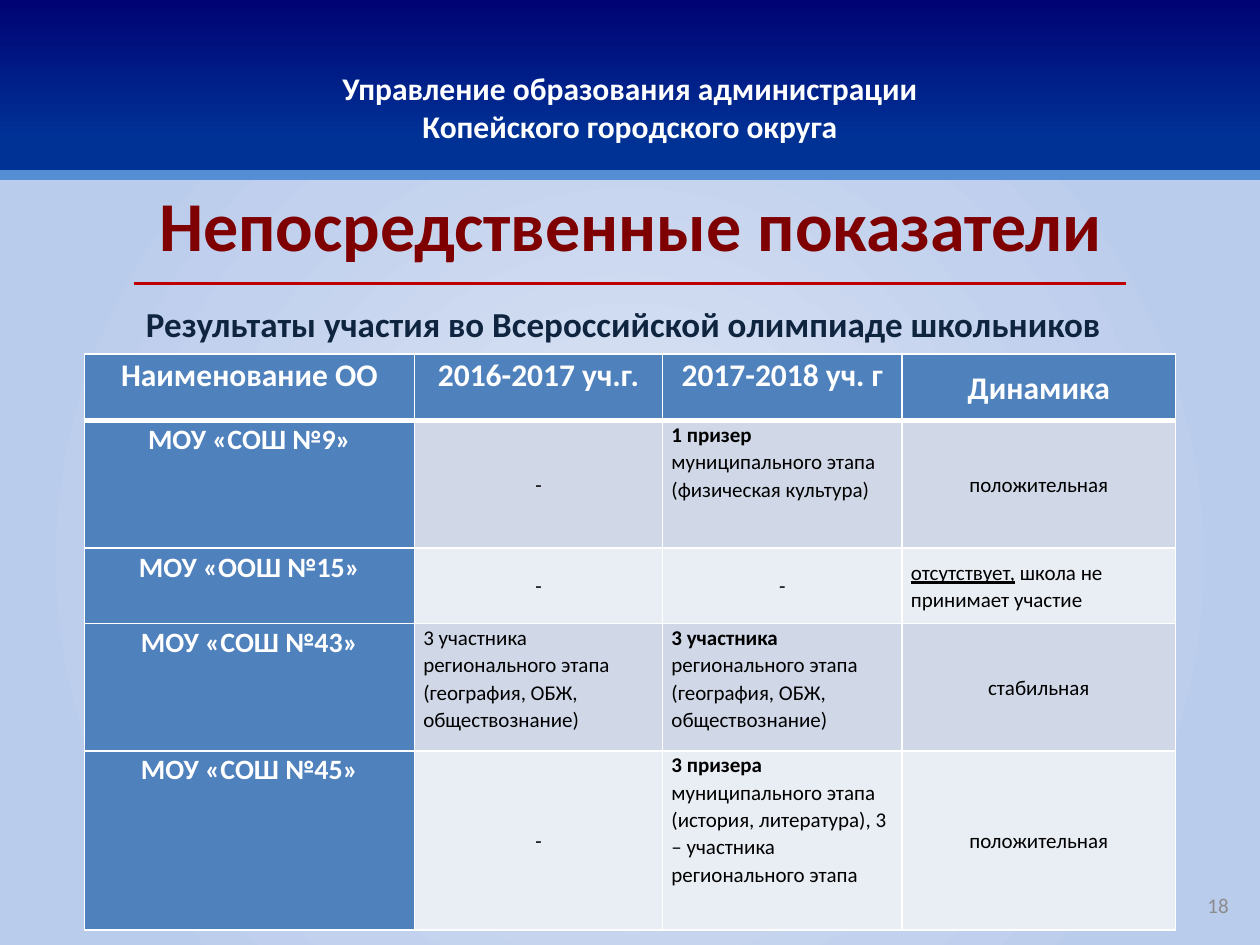
from lxml import etree
from pptx import Presentation
from pptx.dml.color import RGBColor
from pptx.enum import shapes, text
from pptx.oxml import ns, parse_xml
from pptx.util import Inches, Pt

WHITE = RGBColor(0xFF, 0xFF, 0xFF)
BLACK = RGBColor(0, 0, 0)
GREY = RGBColor(0x8C, 0x8C, 0x8C)
MAROON = RGBColor(0x7E, 0, 0)
RED = RGBColor(0xC0, 0, 0)
NAVY = RGBColor(0x0F, 0x24, 0x3E)
SKY = RGBColor(0x55, 0x8E, 0xD5)
HEADER_BLUE = RGBColor(0x4F, 0x81, 0xBD)
BANDS = [RGBColor(0xD0, 0xD8, 0xE8), RGBColor(0xE9, 0xED, 0xF4)]
BAND_STOPS = [(0, RGBColor(0, 0x03, 0x74)), (79, RGBColor(0, 0x32, 0x96))]
PANEL_STOPS = [(0, RGBColor(0xE1, 0xE8, 0xF5)), (62, RGBColor(0xC2, 0xD1, 0xED)),
               (83, RGBColor(0xBA, 0xCC, 0xEC))]
DOWNWARD = '<a:lin ang="5400000" scaled="0"/>'
RADIAL = ('<a:path path="circle"><a:fillToRect l="50000" t="50000" '
          'r="50000" b="50000"/></a:path>')

LEFT, CENTER, RIGHT = text.PP_ALIGN.LEFT, text.PP_ALIGN.CENTER, text.PP_ALIGN.RIGHT
TOP, MIDDLE = text.MSO_ANCHOR.TOP, text.MSO_ANCHOR.MIDDLE

COLUMNS = [2.62, 1.97, 1.9, 2.17]
ROWS = [0.53, 1.01, 0.6, 1.01, 1.42]
HEADINGS = ["Наименование ОО", "2016-2017 уч.г.", "2017-2018 уч. г", "Динамика"]
SUBJECTS = "регионального этапа (география, ОБЖ, обществознание)"
RESULTS = [
    ["МОУ «СОШ №9»", "-",
     ("1 призер ", "муниципального этапа (физическая культура)"), "положительная"],
    ["МОУ «ООШ №15»", "-", "-", ("отсутствует,", " школа не принимает участие")],
    ["МОУ «СОШ №43»", "3 участника " + SUBJECTS, ("3 участника ", SUBJECTS), "стабильная"],
    ["МОУ «СОШ №45»", "-",
     ("3 призера ", "муниципального этапа (история, литература), "
      "3 – участника регионального этапа"), "положительная"],
]


def format_font(font, size, color, bold=False):
    font.name = "Calibri"
    font.size = Pt(size)
    font.bold = bold
    font.color.rgb = color


def write_text(box, content, size, color, align, bold=False, anchor=TOP):
    frame = box.text_frame
    frame.word_wrap = True
    frame.vertical_anchor = anchor
    frame.text = content
    para = frame.paragraphs[0]
    para.alignment = align
    for span in para.runs:
        format_font(span.font, size, color, bold)


def add_text(page, content, place, *style, **options):
    box = page.shapes.add_textbox(*map(Inches, place))
    write_text(box, content, *style, **options)


def add_gradient_box(page, place, stops, direction):
    box = page.shapes.add_shape(shapes.MSO_SHAPE.RECTANGLE, *map(Inches, place))
    box.shadow.inherit = False
    box.line.fill.background()
    colors = "".join(f'<a:gs pos="{pos * 1000}"><a:srgbClr val="{color}"/></a:gs>'
                     for pos, color in stops)
    gradient = parse_xml(f'<a:gradFill {ns.nsdecls("a")} rotWithShape="1">'
                         f'<a:gsLst>{colors}</a:gsLst>{direction}</a:gradFill>')
    box.element.spPr.find(ns.qn("a:prstGeom")).addnext(gradient)
    return box


def add_rule(page, left, right, top, color, width):
    rule = page.shapes.add_connector(shapes.MSO_CONNECTOR.STRAIGHT, Inches(left),
                                     Inches(top), Inches(right), Inches(top))
    rule.line.color.rgb = color
    rule.line.width = Pt(width)
    etree.SubElement(rule.element.spPr, ns.qn("a:effectLst"))


def add_title(page):
    title = page.shapes.title
    title.element.getparent().append(title.element)
    title.left, title.top, title.width, title.height = map(Inches, (1.06, 1.34, 7.89, 0.87))
    write_text(title, "Непосредственные показатели", 40, MAROON, CENTER, True, MIDDLE)


def set_borders(cell, bottom_width, top_width):
    properties = cell._tc.get_or_add_tcPr()
    for side, width in (("L", 1), ("R", 1), ("T", top_width), ("B", bottom_width)):
        properties.append(parse_xml(
            f'<a:ln{side} {ns.nsdecls("a")} w="{Pt(width)}"><a:solidFill>'
            f'<a:srgbClr val="{WHITE}"/></a:solidFill></a:ln{side}>'))


def fill_cell(cell, content, size, color, bold, fill, align, anchor):
    cell.fill.solid()
    cell.fill.fore_color.rgb = fill
    cell.margin_left = cell.margin_right = Inches(0.07)
    cell.margin_top = cell.margin_bottom = 0
    cell.vertical_anchor = anchor
    para = cell.text_frame.paragraphs[0]
    para.alignment = align
    para.line_spacing = 1.07
    for part in [content] if isinstance(content, str) else content:
        span = para.add_run()
        span.text = part
        format_font(span.font, size, color, bold)


def add_results_table(page):
    frame = page.shapes.add_table(len(ROWS), len(COLUMNS), Inches(0.67), Inches(2.81),
                                  Inches(sum(COLUMNS)), Inches(sum(ROWS)))
    table = frame.table
    for column, width in zip(table.columns, COLUMNS):
        column.width = Inches(width)
    for row, height in zip(table.rows, ROWS):
        row.height = Inches(height)
    for r, values in enumerate([HEADINGS] + RESULTS):
        for c, content in enumerate(values):
            cell = table.cell(r, c)
            set_borders(cell, 3 if r == 0 else 1, 3 if r == 1 else 1)
            if r == 0:
                fill_cell(cell, content, 18, WHITE, True, HEADER_BLUE, CENTER,
                          MIDDLE if c == 3 else TOP)
            elif c == 0:
                fill_cell(cell, content, 16, WHITE, True, HEADER_BLUE, CENTER, TOP)
            else:
                short = isinstance(content, str) and len(content) < 20
                fill_cell(cell, content, 12, BLACK, False, BANDS[(r - 1) % 2],
                          CENTER if short else LEFT, MIDDLE if short or c == 3 else TOP)
                if not isinstance(content, str):
                    lead = cell.text_frame.paragraphs[0].runs[0].font
                    if c == 3:
                        lead.underline = True
                    else:
                        lead.bold = True


def main():
    deck = Presentation()
    deck.slide_width, deck.slide_height = Inches(10), Inches(7.5)
    page = deck.slides.add_slide(deck.slide_layouts[5])
    band = add_gradient_box(page, (0, 0, 10, 1.39), BAND_STOPS, DOWNWARD)
    write_text(band, "Управление образования администрации\vКопейского городского округа",
               18, WHITE, CENTER, True, MIDDLE)
    band.text_frame.margin_top = Inches(0.35)
    add_gradient_box(page, (0, 1.39, 10, 6.11), PANEL_STOPS, RADIAL)
    add_rule(page, 0, 10, 1.39, SKY, 6)
    add_rule(page, 1.06, 8.94, 2.25, RED, 2.25)
    add_title(page)
    add_text(page, "Результаты участия во Всероссийской олимпиаде школьников",
             (1.06, 2.35, 7.87, 0.43), 20, NAVY, LEFT, bold=True)
    add_results_table(page)
    add_text(page, "18", (7.52, 6.98, 2.33, 0.4), 12, GREY, RIGHT, anchor=MIDDLE)
    deck.save("out.pptx")


if __name__ == "__main__":
    main()
